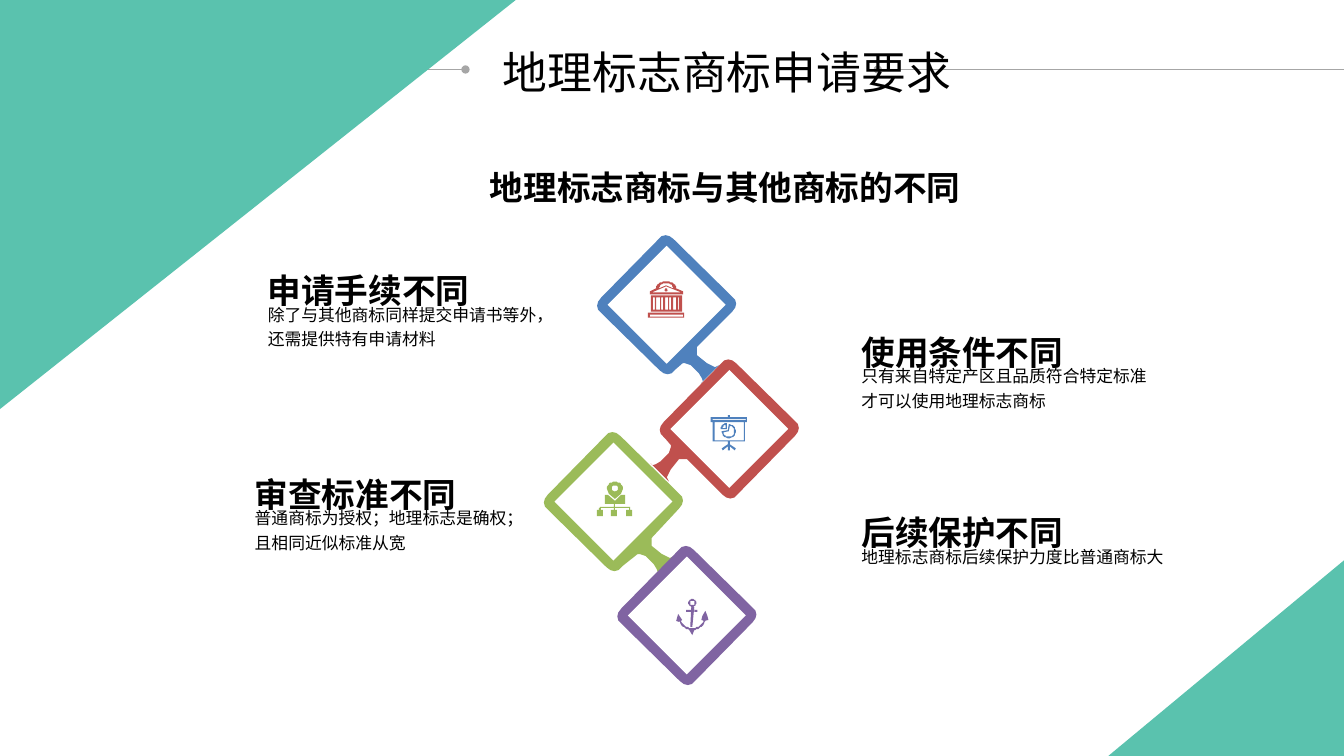
from math import cos, radians, sin

from lxml.etree import SubElement
from pptx import Presentation
from pptx.dml.color import RGBColor
from pptx.enum.shapes import MSO_CONNECTOR, MSO_SHAPE as Kind
from pptx.enum.text import MSO_AUTO_SIZE as Fit, PP_ALIGN as Align
from pptx.oxml.ns import qn
from pptx.util import Cm, Pt

# Content: lengths in cm
WIDE, HIGH = 33.87, 19.05
TEAL, GREY, WHITE, BLACK = "5AC2AE", "A6A6A6", "FFFFFF", "000000"
BLUE, RED, GREEN, PURPLE = "4F81BD", "C0504D", "9BBB59", "8064A2"
NOTO, ROBOTO = "Noto Sans CJK SC", "Roboto Condensed"
TITLE = "地理标志商标申请要求"
TOPIC = "地理标志商标与其他商标的不同"
NOTES = [  # left, top, heading, lines
    (21.46, 8.03, "使用条件不同",
     ["只有来自特定产区且品质符合特定标准", "才可以使用地理标志商标"]),
    (21.46, 12.57, "后续保护不同", ["地理标志商标后续保护力度比普通商标大"]),
    (6.5, 6.48, "申请手续不同",
     ["除了与其他商标同样提交申请书等外，", "还需提供特有申请材料"]),
    (6.17, 11.61, "审查标准不同",
     ["普通商标为授权；地理标志是确权；", "且相同近似标准从宽"]),
]
RULES = [(0, 11.73, "tailEnd"), (22.12, WIDE, "headEnd")]
WEDGES = [(0, 0, 13, 10.31, 0), (27.93, 14.12, 5.94, 4.93, 180)]
RINGS = [  # centre, colour, side that holds the neck, neck shift
    (16.8, 7.68, BLUE, 1, (0, 0)),
    (15.46, 12.64, GREEN, 1, (8, -6)),
    (17.31, 15.51, PURPLE, None, (0, 0)),
    (18.38, 10.81, RED, 2, (0, 0)),
]

# Outlines: points in units of 0.0254 cm
UNIT = Cm(0.0254)
TIP = [(-9, -64), (-5, -67.5), (-1, -69), (3, -68), (7, -65)]
NECK = [(30.5, 42.5), (29.5, 46), (30.5, 49.5), (39.5, 57.5), (43.5, 60.5),
        (47.5, 61.5), (51.5, 59.5), (33.5, 78.5), (35.5, 75.5), (35, 73),
        (32.5, 68.5), (23.5, 59.5), (18.5, 57.5), (15.5, 58.5)]


def box(x1, y1, x2, y2):
    return [(x1, y1), (x2, y1), (x2, y2), (x1, y2)]


def arc(x, y, rx, ry, start=0, end=360):
    steps = [radians(start + (end - start) * i / 24) for i in range(25)]
    return [(x + rx * cos(a), y + ry * sin(a)) for a in steps]


def turn(pts, times):
    for _ in range(times):
        pts = [(-y, x) for x, y in pts]
    return pts


def flip(pts, axis):
    return [(2 * axis - x, y) for x, y in pts]


def ring(side, shift):
    pts = []
    for i in range(4):
        pts += turn(TIP, i)
        if i == side:
            neck = [(x + shift[0], y + shift[1]) for x, y in NECK]
            pts += turn(neck, i - 1)
    return pts


# Icons: each is a list of outlines, inner ones cut holes
GAPS = [(5, 7), (8, 12), (13, 15), (17, 20), (21, 23), (25, 28), (30, 31)]
BANK = [
    box(0, 31, 36, 36), box(2, 33, 35, 35), box(3, 14, 34, 30),
    *[box(a, 16, b, 28) for a, b in GAPS],
    [(2, 13), (2, 10), (8, 7), *arc(18, 7, 10, 7, 180, 360), (35, 10), (35, 13)],
    [(4, 11), (18, 5), (33, 11)],
    [*arc(18, 7, 7, 5, 180, 360), (18, 4)],
    arc(18, 8.7, 1.5, 1.5),
]
LEG = [(17, 29), (11, 33), (12, 35), (17, 31)]
BOARD = [
    box(17, 0, 19, 2), box(0, 2, 36, 7), box(2, 4, 35, 5),
    box(2, 7, 34, 26), box(4, 7, 33, 25), box(17, 26, 19, 35),
    LEG, flip(LEG, 18),
    [*arc(18, 16, 7, 7, -90, 180), (17, 15)],
    [*arc(18, 16, 5.5, 5.5, -80, 170), (18.5, 16)],
    [*arc(16, 14, 6, 6, 180, 270), (16, 14)],
    [*arc(15, 13, 3, 3, 180, 270), (15, 13)],
]
PIN = [
    [*arc(18, 7, 8, 7, 180, 360), (24, 12), (18, 17), (12, 12)],
    arc(18, 6.5, 3, 3),
    [(8, 13), (11, 13), (18, 19), (24, 13), (28, 13), (28, 22), (8, 22)],
    box(17, 22, 18.5, 25), box(3, 25, 33, 26),
    *[box(x + 2.5, 26, x + 3.8, 28) for x in (0, 14.5, 29)],
    *[box(x, 28, x + 6, 34) for x in (0, 14.5, 29)],
]
ANCHOR = [
    arc(16, 4, 4, 4), arc(16, 4, 2.2, 2.2),
    [(15, 8), (17.5, 8), (16.5, 28), (14, 28)],
    box(10, 11, 15, 13), box(17.5, 11, 21, 13),
    arc(16, 20, 13, 11, 10, 170) + arc(16, 20, 11, 9, 170, 10),
    [(2, 15), (0, 22), (3, 23), (6, 21)],
    [(29, 12), (26, 17), (25, 21), (28, 22), (32, 21), (31, 17)],
    [(13, 31), (18, 31), (15.5, 36)],
]
ICONS = [(15.04, 12.14, PIN, GREEN), (17.91, 10.46, BOARD, BLUE),
         (16.33, 7.09, BANK, RED), (17.04, 15.09, ANCHOR, PURPLE)]

deck = Presentation()
deck.slide_width, deck.slide_height = Cm(WIDE), Cm(HIGH)
shapes = deck.slides.add_slide(deck.slide_layouts[6]).shapes


def paint(fmt, tone):
    if hasattr(fmt, "solid"):
        fmt.solid()
        fmt = fmt.fore_color
    fmt.rgb = RGBColor.from_string(tone)


def dress(shape, tone):
    shape.shadow.inherit = False
    paint(shape.fill, tone)
    shape.line.fill.background()
    return shape


def preset(kind, x, y, w, h, tone):
    return dress(shapes.add_shape(kind, Cm(x), Cm(y), Cm(w), Cm(h)), tone)


def draw(x, y, loops, tone):
    pen = shapes.build_freeform(*loops[0][0], scale=UNIT)
    for i, pts in enumerate(loops):
        if i:
            pen.move_to(*pts[0])
        pen.add_line_segments(pts[1:], close=True)
    return dress(pen.convert_to_shape(Cm(x), Cm(y)), tone)


def write(lines, x, y, w, h, size=12, bold=False, font=NOTO,
          align=Align.JUSTIFY, space=1.2, wrap=True):
    frame = shapes.add_textbox(Cm(x), Cm(y), Cm(w), Cm(h)).text_frame
    frame.word_wrap, frame.auto_size = wrap, Fit.SHAPE_TO_FIT_TEXT
    for i, line in enumerate(lines):
        para = frame.add_paragraph() if i else frame.paragraphs[0]
        para.alignment, para.line_spacing = align, space
        run = para.add_run()
        run.text = line
        run.font.size, run.font.bold, run.font.name = Pt(size), bold, font
        paint(run.font.color, BLACK)
        SubElement(run.font._element, qn("a:ea"), typeface=font)


# Title and its rules
for start, stop, end in RULES:
    rule = shapes.add_connector(
        MSO_CONNECTOR.STRAIGHT, Cm(start), Cm(1.75), Cm(stop), Cm(1.75))
    rule.line.width = Pt(0.75)
    paint(rule.line.fill, GREY)
    SubElement(rule.line._get_or_add_ln(), qn("a:" + end), type="oval")
    SubElement(rule._element.spPr, qn("a:effectLst"))
write([TITLE], 12.42, 0.99, 11.81, 1.6, size=32, font=ROBOTO,
      align=Align.CENTER, space=None, wrap=False)

# Chain of diamonds
for x, y, tone, side, shift in RINGS:
    draw(x, y, [ring(side, shift)], tone)
CORE = 2.97
for x, y, *_ in RINGS:
    preset(Kind.DIAMOND, x - CORE / 2, y - CORE / 2, CORE, CORE, WHITE)
for icon in ICONS:
    draw(*icon)

# Notes
for x, y, head, lines in NOTES:
    write(lines, x, y + 0.97, 12.37, 0.25 + 0.6 * len(lines))
    write([head], x, y, 5.79, 1.45, size=24, bold=True)

# Corner wedges
for x, y, w, h, angle in WEDGES:
    wedge = preset(Kind.ISOSCELES_TRIANGLE, x, y, w, h, TEAL)
    wedge.adjustments[0] = 0
    wedge.rotation = angle
    wedge._element.spPr.find(qn("a:xfrm")).set("flipV", "1")

write([TOPIC], 11.38, 4.09, 13.79, 1.27, size=24, bold=True,
      align=Align.CENTER, space=None)

deck.save("out.pptx")
